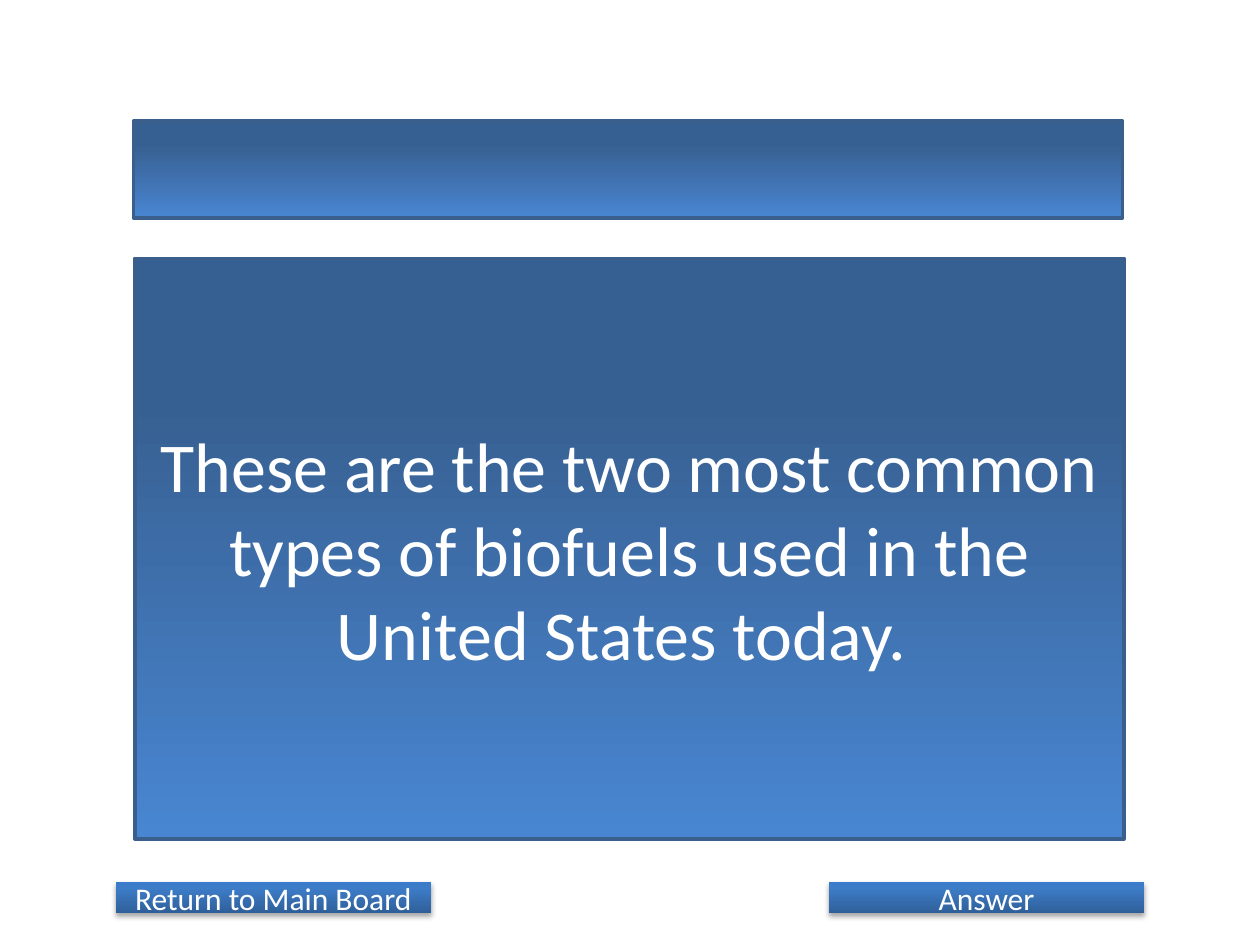
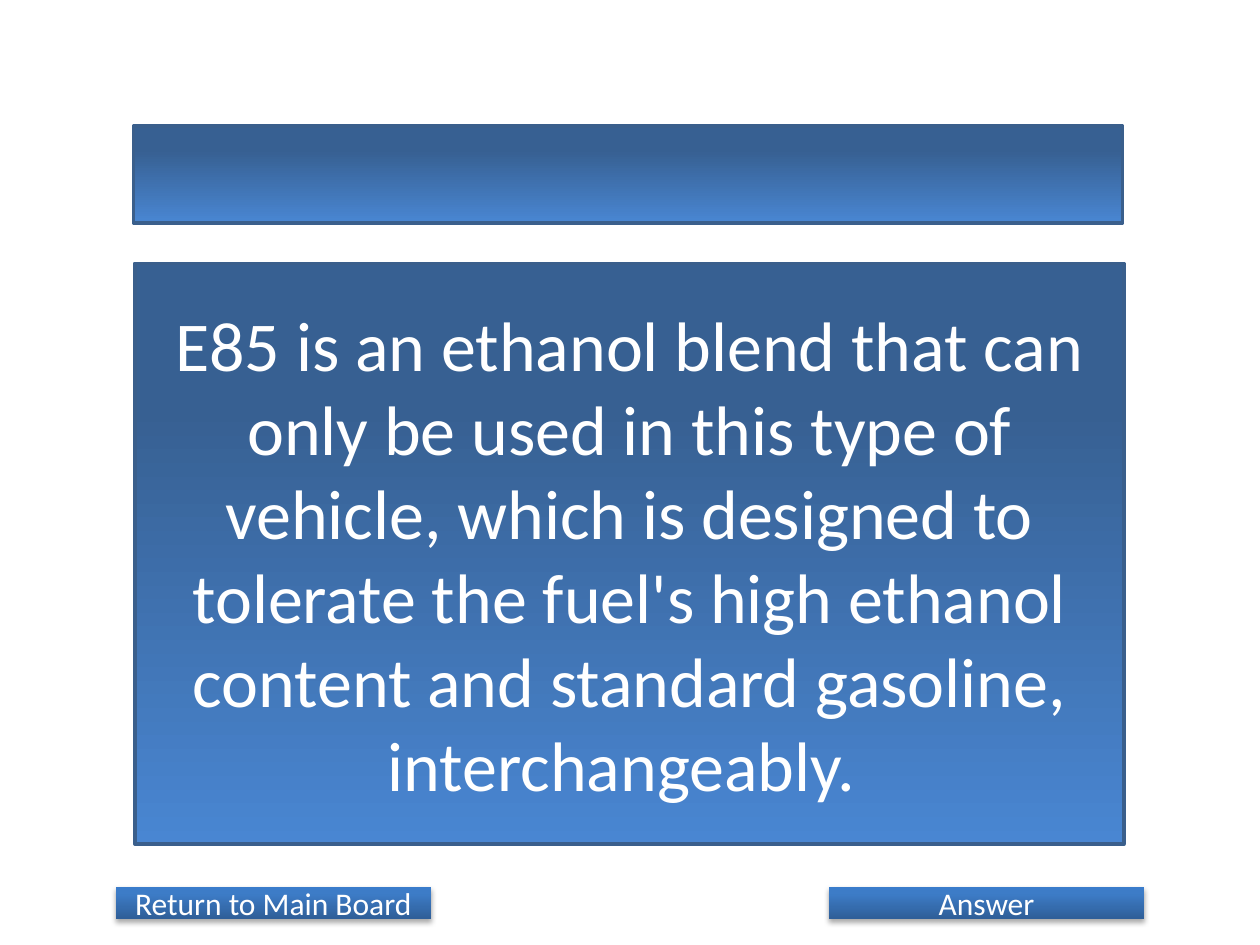
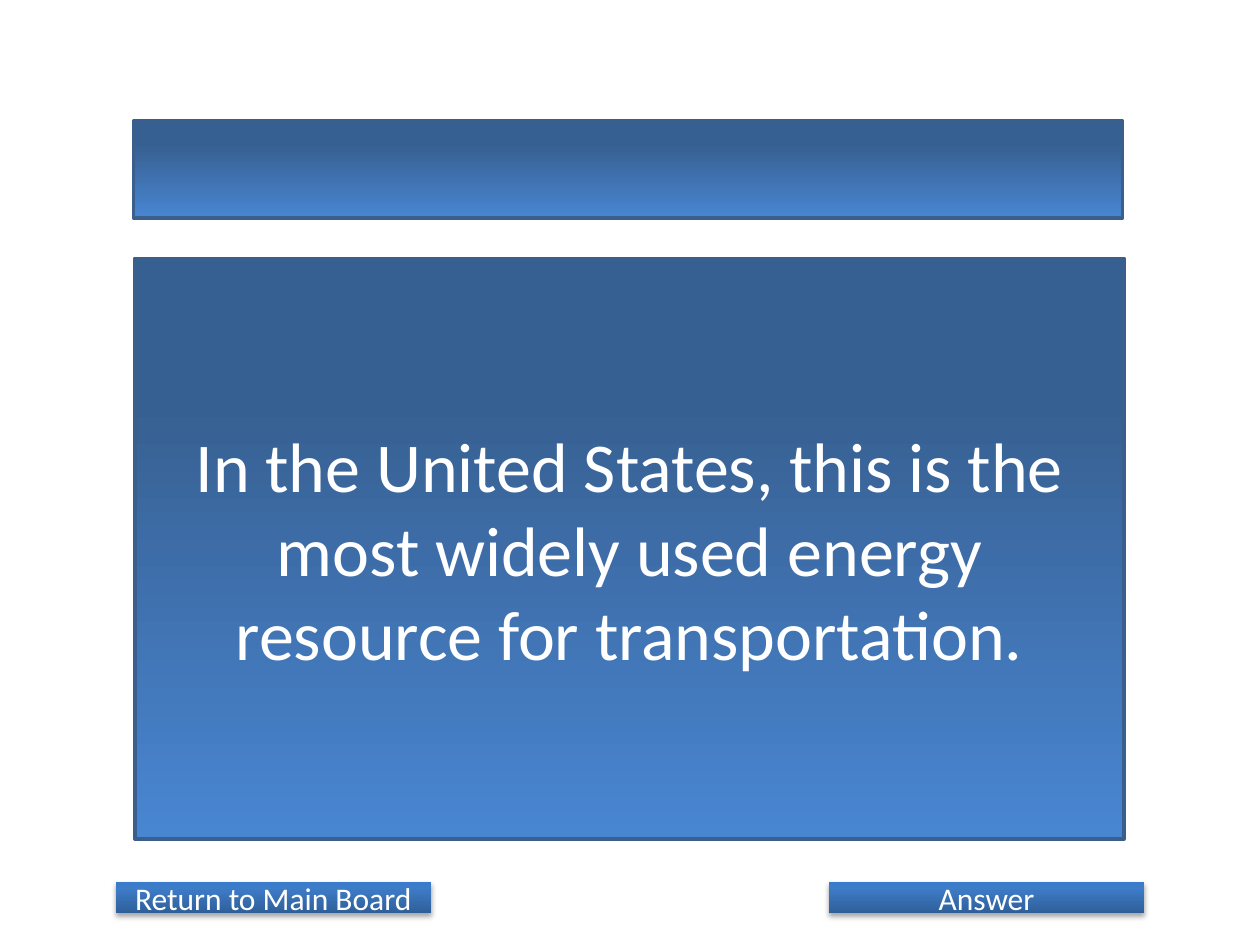
import pptx
import pptx.util
import pptx.dml.color
import pptx.enum.shapes
import pptx.enum.text
import pptx.oxml
import pptx.oxml.ns

CLUES = [
    ("These are the two most common types of biofuels used in the United States today. ", 0),
    ("E85 is an ethanol blend that can only be used in this type of vehicle, which is designed "
     "to tolerate the fuel's high ethanol content and standard gasoline, interchangeably. ", 0.04),
    ("In the United States, this is the most widely used energy resource for transportation.", 0),
]
BUTTONS = [("Answer", 6.58), ("Return to Main Board", 0.92)]

SLIDE_WIDTH, SLIDE_HEIGHT = 10, 7.5
PANEL_LEFT, PANEL_WIDTH = 1.07, 7.85
BAND_TOP, BAND_HEIGHT = 0.96, 0.77
CLUE_HEIGHT = 4.61
GAP = 0.32
CLUE_TOP = BAND_TOP + BAND_HEIGHT + GAP
BUTTON_TOP, BUTTON_WIDTH, BUTTON_HEIGHT = 7, 2.5, 0.25

PANEL = {"stops": [(0, "376092"), (25, "376092"), (100, "4986D2")], "angle": 90,
         "outline": "3A5F8C", "size": 40}
BUTTON = {"stops": [(0, "2F5F99"), (80, "3D7CC7"), (100, "3A7CCB")], "angle": 270,
          "outline": None, "size": 18}
SHADOW = {"blurRad": pptx.util.Pt(3.1), "dist": pptx.util.Pt(1.8), "dir": 90 * 60000,
          "algn": "ctr", "rotWithShape": 0}


def color(code):
    return pptx.dml.color.RGBColor.from_string(code)


def add_child(parent, tag, **attributes):
    child = pptx.oxml.parse_xml(f"<a:{tag} {pptx.oxml.ns.nsdecls('a')}/>")
    for key, value in attributes.items():
        child.set(key, str(value))
    parent.append(child)
    return child


def paint_gradient(fill, properties, style):
    fill.gradient()
    fill.gradient_angle = 360 - style["angle"]
    stops = properties.find(".//" + pptx.oxml.ns.qn("a:gsLst"))
    for stop in list(stops):
        stops.remove(stop)
    for position, code in style["stops"]:
        add_child(add_child(stops, "gs", pos=position * 1000), "srgbClr", val=code)


def add_box(slide, place, style, words=""):
    box = slide.shapes.add_shape(pptx.enum.shapes.MSO_SHAPE.RECTANGLE,
                                 *(pptx.util.Inches(length) for length in place))
    box.shadow.inherit = False
    properties = box.fill._xPr
    paint_gradient(box.fill, properties, style)
    if style["outline"]:
        box.line.color.rgb = color(style["outline"])
        box.line.width = pptx.util.Pt(2)
    else:
        box.line.fill.background()
        effects = properties.find(pptx.oxml.ns.qn("a:effectLst"))
        shade = add_child(add_child(effects, "outerShdw", **SHADOW), "srgbClr", val="000000")
        add_child(shade, "alpha", val=35000)
    if words:
        frame = box.text_frame
        frame.word_wrap = True
        frame.vertical_anchor = pptx.enum.text.MSO_ANCHOR.MIDDLE
        paragraph = frame.paragraphs[0]
        paragraph.alignment = pptx.enum.text.PP_ALIGN.CENTER
        run = paragraph.add_run()
        run.text = words
        for key, value in {"name": "Calibri", "size": pptx.util.Pt(style["size"])}.items():
            setattr(run.font, key, value)
        run.font.color.rgb = color("FFFFFF")


def main():
    deck = pptx.Presentation()
    deck.slide_width = pptx.util.Inches(SLIDE_WIDTH)
    deck.slide_height = pptx.util.Inches(SLIDE_HEIGHT)
    for clue, drop in CLUES:
        slide = deck.slides.add_slide(deck.slide_layouts[6])
        add_box(slide, (PANEL_LEFT, CLUE_TOP + drop, PANEL_WIDTH, CLUE_HEIGHT), PANEL, clue)
        add_box(slide, (PANEL_LEFT - 0.01, BAND_TOP + drop, PANEL_WIDTH, BAND_HEIGHT), PANEL)
        for label, left in BUTTONS:
            add_box(slide, (left, BUTTON_TOP + drop, BUTTON_WIDTH, BUTTON_HEIGHT), BUTTON, label)
    deck.save("out.pptx")


if __name__ == "__main__":
    main()
